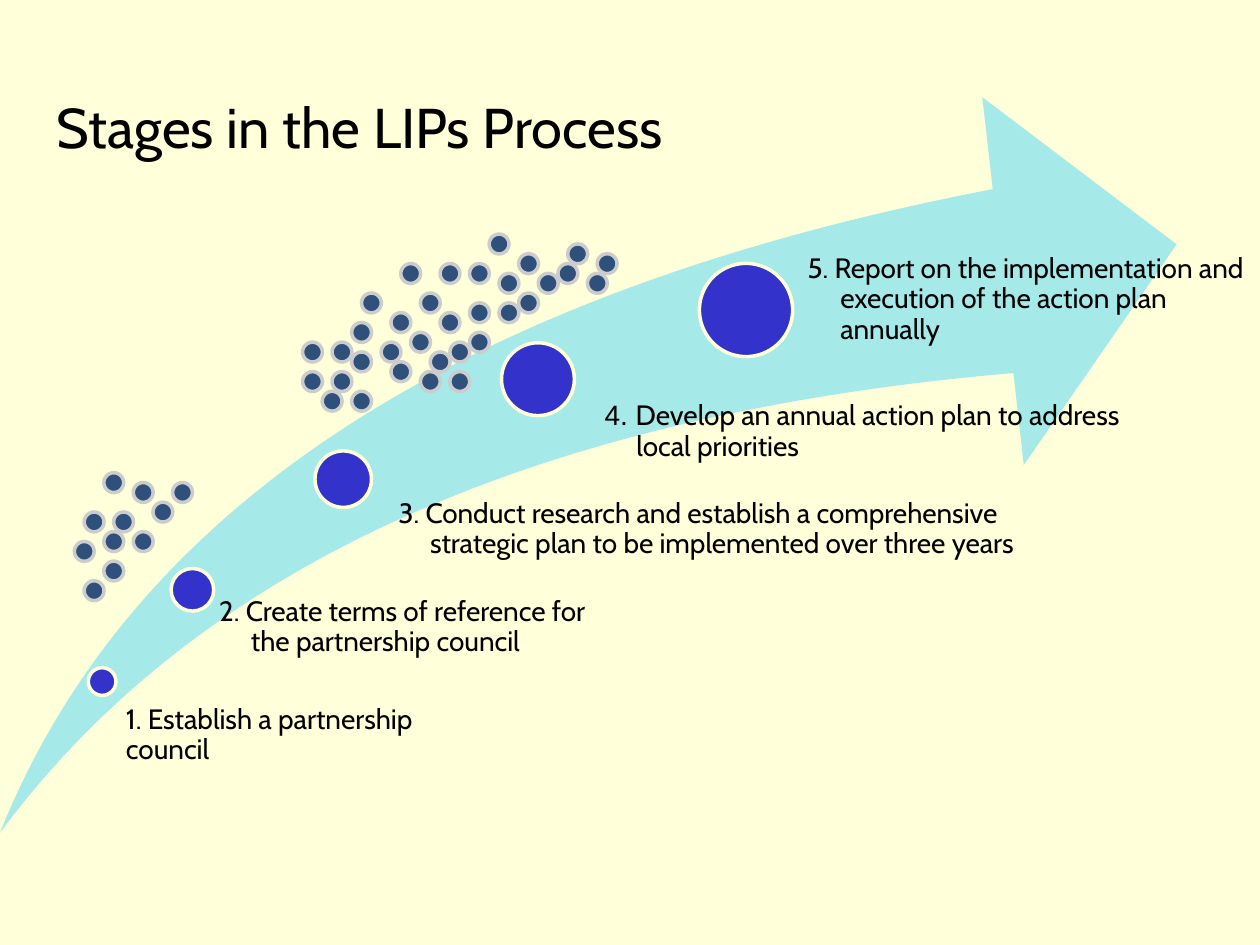
from typing import NamedTuple

from pptx import Presentation
from pptx.dml.color import RGBColor
from pptx.enum.shapes import MSO_SHAPE
from pptx.enum.text import MSO_ANCHOR, PP_ALIGN
from pptx.util import Cm, Pt

COLORS = {
    "background": "FFFFD9",
    "arrow": "A5E9E9",
    "stage": "3333CC",
    "dot": "2E507A",
    "dot_ring": "CCCCCC",
    "text": "000000",
}
FONT = "Cabin"
DOT_SIZE = Cm(0.4)
DOT_STEP = Cm(5.94) / 30


class Stage(NamedTuple):
    disc_left: float
    disc_top: float
    disc_size: float
    left: float
    top: float
    width: float
    hanging: float
    number: str
    text: str
    number_font: str = FONT


class Cluster(NamedTuple):
    left: float
    top: float
    rows: dict[int, tuple[int, ...]]


STAGES = [
    Stage(1.78, 13.46, 0.56, 2.54, 14.22, 6.6, 0, "1. ",
          "Establish a partnership council"),
    Stage(3.45, 11.46, 0.86, 4.42, 12.04, 7.7, 0.64, "2. ",
          "Create terms of reference for the partnership council"),
    Stage(6.35, 9.09, 1.14, 8.03, 10.06, 13.2, 0.64, "3. ",
          "Conduct research and establish a comprehensive strategic plan "
          "to be implemented over three years"),
    Stage(10.11, 6.91, 1.47, 12.19, 8.1, 10.9, 0.64, "4. ",
          "Develop an annual action plan to address local priorities", "Arial"),
    Stage(14.1, 5.31, 1.88, 16.28, 5.13, 9.12, 0.66, "5. ",
          "Report on the implementation and execution of the action plan annually"),
]

CLUSTERS = [
    Cluster(6.1, 4.72, {
        0: (19,), 1: (27,), 2: (22, 30), 3: (10, 14, 17, 26), 4: (20, 24, 29),
        6: (6, 12, 22), 7: (17, 20), 8: (9, 14), 9: (5,), 10: (11, 17),
        11: (0, 3, 8, 15), 12: (5, 13), 13: (9,), 14: (0, 3, 12, 15), 16: (2, 5),
    }),
    Cluster(1.5, 9.53, {
        0: (3,), 1: (6, 10), 3: (8,), 4: (1, 4), 6: (3, 6), 7: (0,), 9: (3,), 11: (1,),
    }),
]


def color(name: str) -> RGBColor:
    return RGBColor.from_string(COLORS[name])


def add_circle(s, left: int, top: int, size: int, fill: str, line: str) -> None:
    sp = s.shapes.add_shape(MSO_SHAPE.OVAL, left, top, size, size)
    sp.shadow.inherit = False
    sp.fill.solid()
    sp.fill.fore_color.rgb = color(fill)
    sp.line.color.rgb = color(line)
    sp.line.width = Pt(2)


def add_arrow(s) -> None:
    sp = s.shapes.add_shape(MSO_SHAPE.SWOOSH_ARROW, 0, Cm(1.96), Cm(23.72), Cm(14.83))
    sp.adjustments[0] = 0.25
    sp.adjustments[1] = 0.25
    sp.shadow.inherit = False
    sp.fill.solid()
    sp.fill.fore_color.rgb = color("arrow")
    sp.line.fill.background()


def add_title(s) -> None:
    sp = s.shapes.title
    sp.left, sp.top, sp.width, sp.height = Cm(0.89), Cm(1.73), Cm(13.9), Cm(2.36)
    tf = sp.text_frame
    tf.text = "Stages in the LIPs Process"
    tf.word_wrap = False
    tf.vertical_anchor = MSO_ANCHOR.TOP
    p = tf.paragraphs[0]
    p.alignment = PP_ALIGN.LEFT
    p.font.name = FONT
    p.font.size = Pt(32)
    p.font.color.rgb = color("text")


def add_stage(s, stage: Stage) -> None:
    add_circle(s, Cm(stage.disc_left), Cm(stage.disc_top), Cm(stage.disc_size),
               "stage", "background")
    sp = s.shapes.add_textbox(Cm(stage.left), Cm(stage.top), Cm(stage.width), Cm(1.4))
    tf = sp.text_frame
    tf.word_wrap = True
    tf.margin_left = tf.margin_top = tf.margin_right = tf.margin_bottom = 0
    p = tf.paragraphs[0]
    p.line_spacing = 0.9
    p.font.size = Pt(16)
    p.font.color.rgb = color("text")
    pPr = p._p.get_or_add_pPr()
    pPr.set("marL", str(Cm(stage.hanging)))
    pPr.set("indent", str(-Cm(stage.hanging)))
    for text, font in ((stage.number, stage.number_font), (stage.text, FONT)):
        r = p.add_run()
        r.text = text
        r.font.name = font


def add_cluster(s, cluster: Cluster) -> None:
    for row, columns in cluster.rows.items():
        for column in columns:
            add_circle(s, round(Cm(cluster.left) + column * DOT_STEP),
                       round(Cm(cluster.top) + row * DOT_STEP),
                       DOT_SIZE, "dot", "dot_ring")


def main() -> None:
    prs = Presentation()
    prs.slide_width, prs.slide_height = Cm(25.4), Cm(19.05)
    s = prs.slides.add_slide(prs.slide_layouts[5])
    s.background.fill.solid()
    s.background.fill.fore_color.rgb = color("background")
    add_title(s)
    add_arrow(s)
    for stage in STAGES:
        add_stage(s, stage)
    for cluster in CLUSTERS:
        add_cluster(s, cluster)
    prs.save("out.pptx")


if __name__ == "__main__":
    main()
